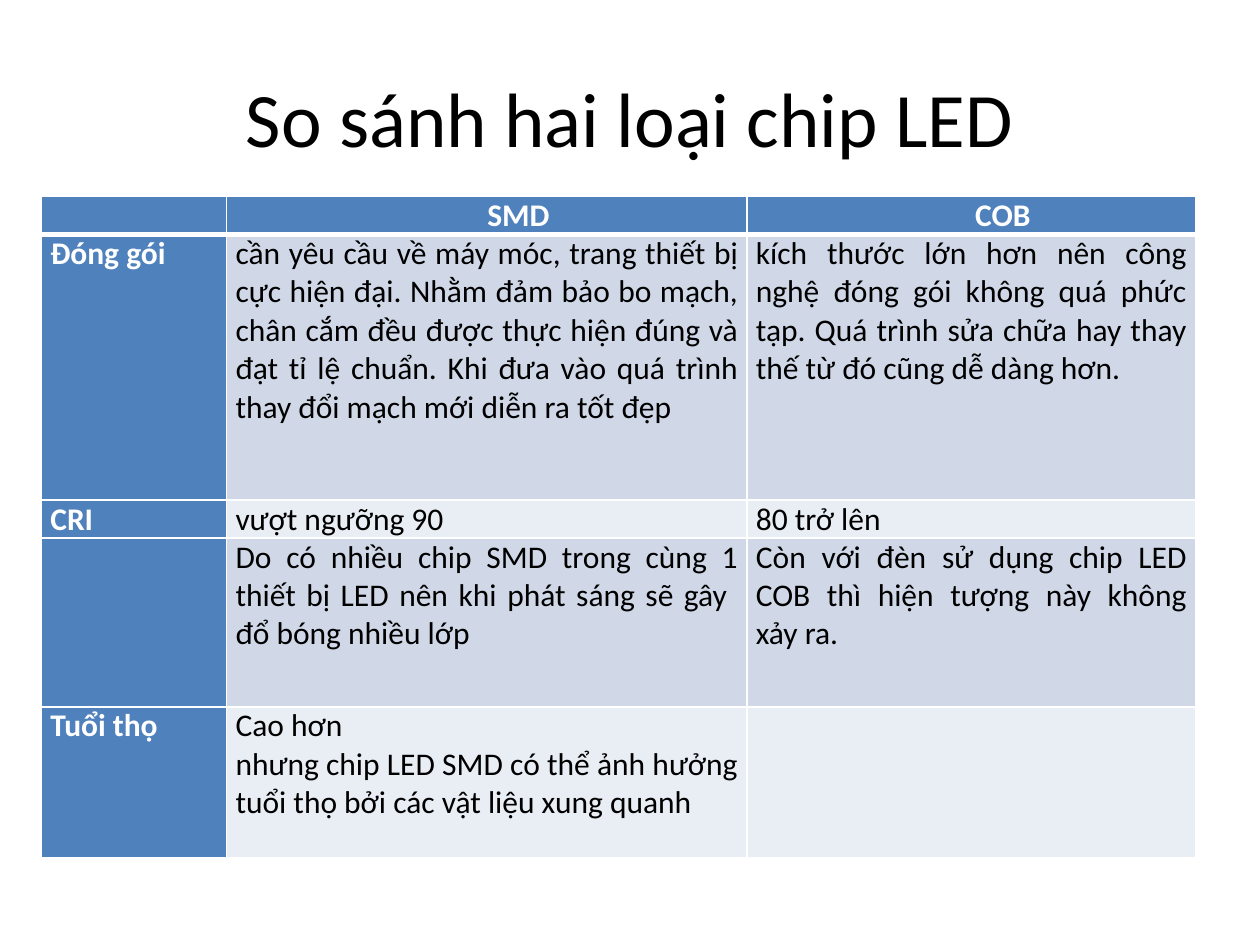
from dataclasses import dataclass

from lxml import etree
from pptx import Presentation
from pptx.dml.color import RGBColor
from pptx.enum.text import MSO_ANCHOR, PP_ALIGN
from pptx.oxml.ns import qn
from pptx.util import Inches, Pt

CENTER, JUSTIFY = PP_ALIGN.CENTER, PP_ALIGN.JUSTIFY
MIDDLE, TOP = MSO_ANCHOR.MIDDLE, MSO_ANCHOR.TOP


@dataclass(frozen=True)
class Theme:
    """Colours, font and type sizes of the slide."""
    font: str = "Calibri"
    title_size: int = 44
    cell_size: int = 18
    ink: str = "000000"
    paper: str = "FFFFFF"
    accent: str = "4F81BD"
    bands: tuple = ("D0D8E8", "E9EDF4")
    thin_rule: int = 1
    thick_rule: int = 3


THEME = Theme()
TITLE = "So sánh hai loại chip LED"
TITLE_BOX = (0.5, 0.3, 9, 1.25)
TABLE_BOX = (0.33, 1.56, 9.16, 5.25)
COLUMN_WIDTHS = (1.47, 4.13, 3.56)
ROW_HEIGHTS = (0.3, 2.11, 0.3, 1.34, 1.2)
COMPARISON = (
    ("", "SMD", "COB"),
    ("Đóng gói",
     "cần yêu cầu về máy móc, trang thiết bị cực hiện đại. Nhằm đảm bảo bo mạch, "
     "chân cắm đều được thực hiện đúng và đạt tỉ lệ chuẩn. Khi đưa vào quá trình "
     "thay đổi mạch mới diễn ra tốt đẹp",
     "kích thước lớn hơn nên công nghệ đóng gói không quá phức tạp. "
     "Quá trình sửa chữa hay thay thế từ đó cũng dễ dàng hơn."),
    ("CRI", "vượt ngưỡng 90", "80 trở lên"),
    ("",
     "Do có nhiều chip SMD trong cùng 1 thiết bị LED nên khi phát sáng sẽ gây "
     " đổ bóng nhiều lớp",
     "Còn với đèn sử dụng chip LED COB thì hiện tượng này không xảy ra."),
    ("Tuổi thọ",
     "Cao hơn\nnhưng chip LED SMD có thể ảnh hưởng tuổi thọ bởi các vật liệu xung quanh",
     ""),
)


def apply_format(target, values):
    """Set each attribute named in values on the target."""
    for name, value in values.items():
        setattr(target, name, value)


def write_text(frame, text, align, size, color, bold=False):
    """Write one paragraph per line of text in one style."""
    frame.text = text
    for paragraph in frame.paragraphs:
        paragraph.alignment = align
        apply_format(paragraph.font, {"name": THEME.font, "size": Pt(size), "bold": bold})
        paragraph.font.color.rgb = RGBColor.from_string(color)
        for run in paragraph.runs:
            apply_format(run.font, {"name": THEME.font, "size": Pt(size), "bold": bold})
            run.font.color.rgb = RGBColor.from_string(color)


def draw_borders(cell, widths):
    """Rule the sides of a cell in the paper colour, ahead of its fill."""
    properties = cell._tc.get_or_add_tcPr()
    for position, (side, width) in enumerate(widths.items()):
        rule = etree.Element(qn(f"a:ln{side}"), w=str(Pt(width)))
        fill = etree.SubElement(rule, qn("a:solidFill"))
        etree.SubElement(fill, qn("a:srgbClr"), val=THEME.paper)
        properties.insert(position, rule)


def add_title(slide, box):
    """Place the centred slide title in the box."""
    frame = slide.shapes.add_textbox(*map(Inches, box)).text_frame
    apply_format(frame, {"word_wrap": True, "vertical_anchor": MIDDLE})
    write_text(frame, TITLE, CENTER, THEME.title_size, THEME.ink)


def style_cell(cell, text, row, column):
    """Fill, rule and write one cell according to its place in the table."""
    is_header = row == 0
    is_label = is_header or column == 0
    fill = THEME.accent if is_label else THEME.bands[(row - 1) % 2]
    cell.fill.solid()
    cell.fill.fore_color.rgb = RGBColor.from_string(fill)
    apply_format(cell, {
        "margin_left": Inches(0.07), "margin_right": Inches(0.07),
        "margin_top": 0, "margin_bottom": 0, "vertical_anchor": TOP,
    })
    write_text(cell.text_frame, text, CENTER if is_header else JUSTIFY,
               THEME.cell_size, THEME.paper if is_label else THEME.ink, is_label)
    if is_header:
        for paragraph in cell.text_frame.paragraphs:
            paragraph._p.get_or_add_pPr().set("indent", str(Inches(0.5)))
    draw_borders(cell, {
        "L": THEME.thin_rule, "R": THEME.thin_rule,
        "T": THEME.thick_rule if row == 1 else THEME.thin_rule,
        "B": THEME.thick_rule if is_header else THEME.thin_rule,
    })


def add_comparison(slide, box):
    """Place the chip comparison table in the box."""
    table = slide.shapes.add_table(
        len(ROW_HEIGHTS), len(COLUMN_WIDTHS), *map(Inches, box)).table
    for column, width in zip(table.columns, COLUMN_WIDTHS):
        column.width = Inches(width)
    for row, height in zip(table.rows, ROW_HEIGHTS):
        row.height = Inches(height)
    for row, texts in enumerate(COMPARISON):
        for column, text in enumerate(texts):
            style_cell(table.cell(row, column), text, row, column)


def main():
    """Build and save the slide."""
    deck = Presentation()
    apply_format(deck, {"slide_width": Inches(10), "slide_height": Inches(7.5)})
    slide = deck.slides.add_slide(deck.slide_layouts[6])
    add_title(slide, TITLE_BOX)
    add_comparison(slide, TABLE_BOX)
    deck.save("out.pptx")


if __name__ == "__main__":
    main()
